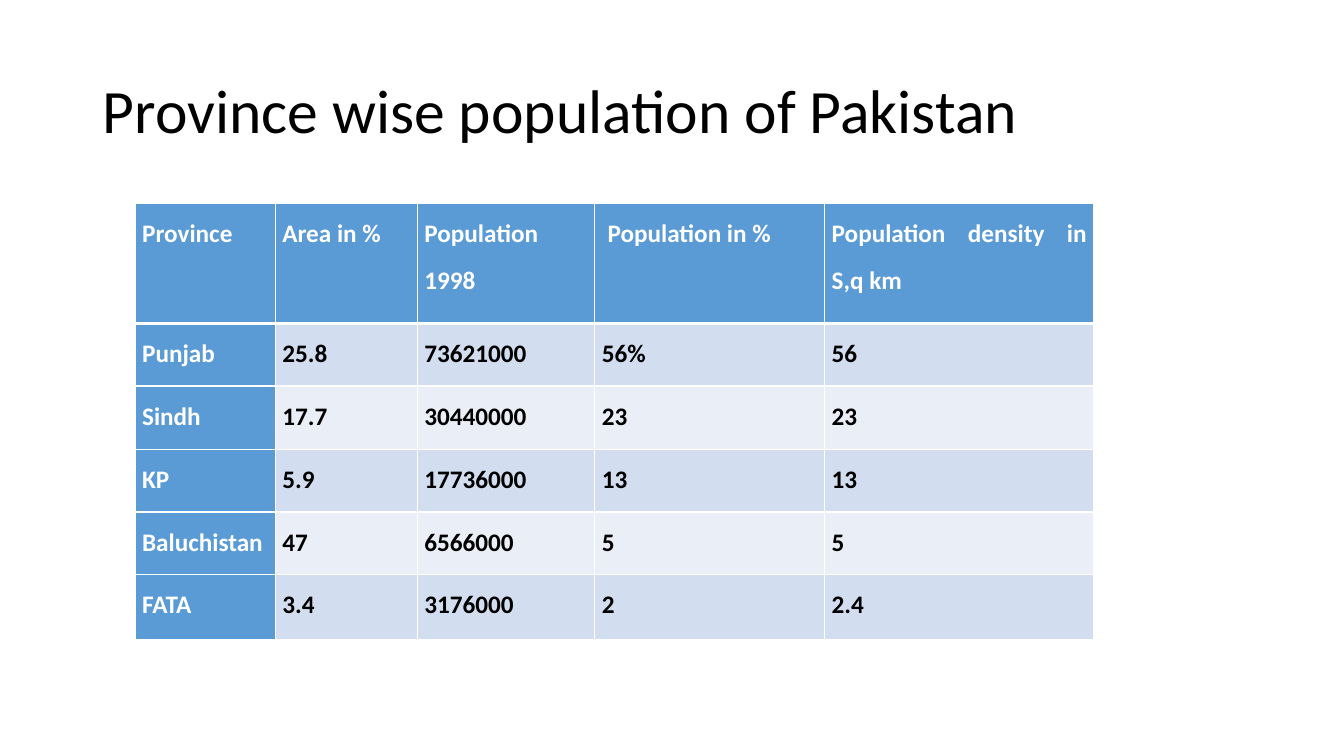
from lxml.etree import SubElement
from pptx import Presentation
from pptx.dml.color import RGBColor
from pptx.enum.text import MSO_ANCHOR as Anchor, PP_ALIGN as Align
from pptx.oxml.ns import qn
from pptx.util import Emu, Pt

PX = 9144  # EMU per px, 100 px to the inch
FONT = "Calibri"
BLACK, WHITE, BLUE = "000000", "FFFFFF", "5B9BD5"
BANDS = ("D2DEEF", "EAEFF7")

TITLE_BOX = (92, 40, 1150, 145)
TABLE_BOX = (134, 202, 951, 433)
COLUMN_WIDTHS = (139, 141, 176, 228, 267)
ROW_HEIGHTS = (119, 62, 63, 62, 62, 65)
ROWS = (
    ("Province", "Area in %", "Population 1998", " Population in %",
     "Population density in S,q km"),
    ("Punjab", "25.8", "73621000", "56%", "56"),
    ("Sindh", "17.7", "30440000", "23", "23"),
    ("KP", "5.9", "17736000", "13", "13"),
    ("Baluchistan", "47", "6566000", "5", "5"),
    ("FATA", "3.4", "3176000", "2", "2.4"),
)


def px(length):
    return Emu(length * PX)


def paint(color_format, color):
    """Give a fill or font colour its hex value."""
    color_format.rgb = RGBColor.from_string(color)


def add_span(para, text, size, color, bold=False):
    span = para.add_run()
    span.text = text
    span.font.name = FONT
    span.font.size = Pt(size)
    span.font.bold = bold
    paint(span.font.color, color)


def add_title(page, box, text):
    title = page.shapes.title
    title.left, title.top, title.width, title.height = map(px, box)
    frame = title.text_frame
    frame.word_wrap = True
    frame.vertical_anchor = Anchor.MIDDLE
    para = frame.paragraphs[0]
    para.alignment = Align.LEFT
    para.line_spacing = 0.9
    add_span(para, text, 44, BLACK)


def set_borders(cell, **widths):
    """Draw white cell edges; widths in points are keyed L, R, T, B."""
    properties = cell._tc.get_or_add_tcPr()
    for index, (side, width) in enumerate(widths.items()):
        line = SubElement(properties, qn(f"a:ln{side}"), w=str(Pt(width)))
        fill = SubElement(line, qn("a:solidFill"))
        SubElement(fill, qn("a:srgbClr"), val=WHITE)
        properties.insert(index, line)


def fill_cell(cell, text, row, column):
    is_heading = row == 0 or column == 0
    cell.fill.solid()
    paint(cell.fill.fore_color, BLUE if is_heading else BANDS[(row - 1) % 2])
    cell.margin_left = cell.margin_right = px(7)
    cell.margin_top = cell.margin_bottom = 0
    para = cell.text_frame.paragraphs[0]
    para.alignment = Align.JUSTIFY
    para.line_spacing = 1.5
    para.space_after = Pt(10)
    add_span(para, text, 18, WHITE if is_heading else BLACK, bold=True)
    set_borders(cell, L=1, R=1, T=3 if row == 1 else 1, B=3 if row == 0 else 1)


def add_population_table(page, box):
    frame = page.shapes.add_table(len(ROWS), len(COLUMN_WIDTHS), *map(px, box))
    table = frame.table
    for column, width in zip(table.columns, COLUMN_WIDTHS):
        column.width = px(width)
    for row, height in zip(table.rows, ROW_HEIGHTS):
        row.height = px(height)
    for row, texts in enumerate(ROWS):
        for column, text in enumerate(texts):
            fill_cell(table.cell(row, column), text, row, column)


def main():
    deck = Presentation()
    deck.slide_width, deck.slide_height = px(1333), px(750)
    page = deck.slides.add_slide(deck.slide_layouts[5])
    add_title(page, TITLE_BOX, "Province wise population of Pakistan")
    add_population_table(page, TABLE_BOX)
    deck.save("out.pptx")


if __name__ == "__main__":
    main()
